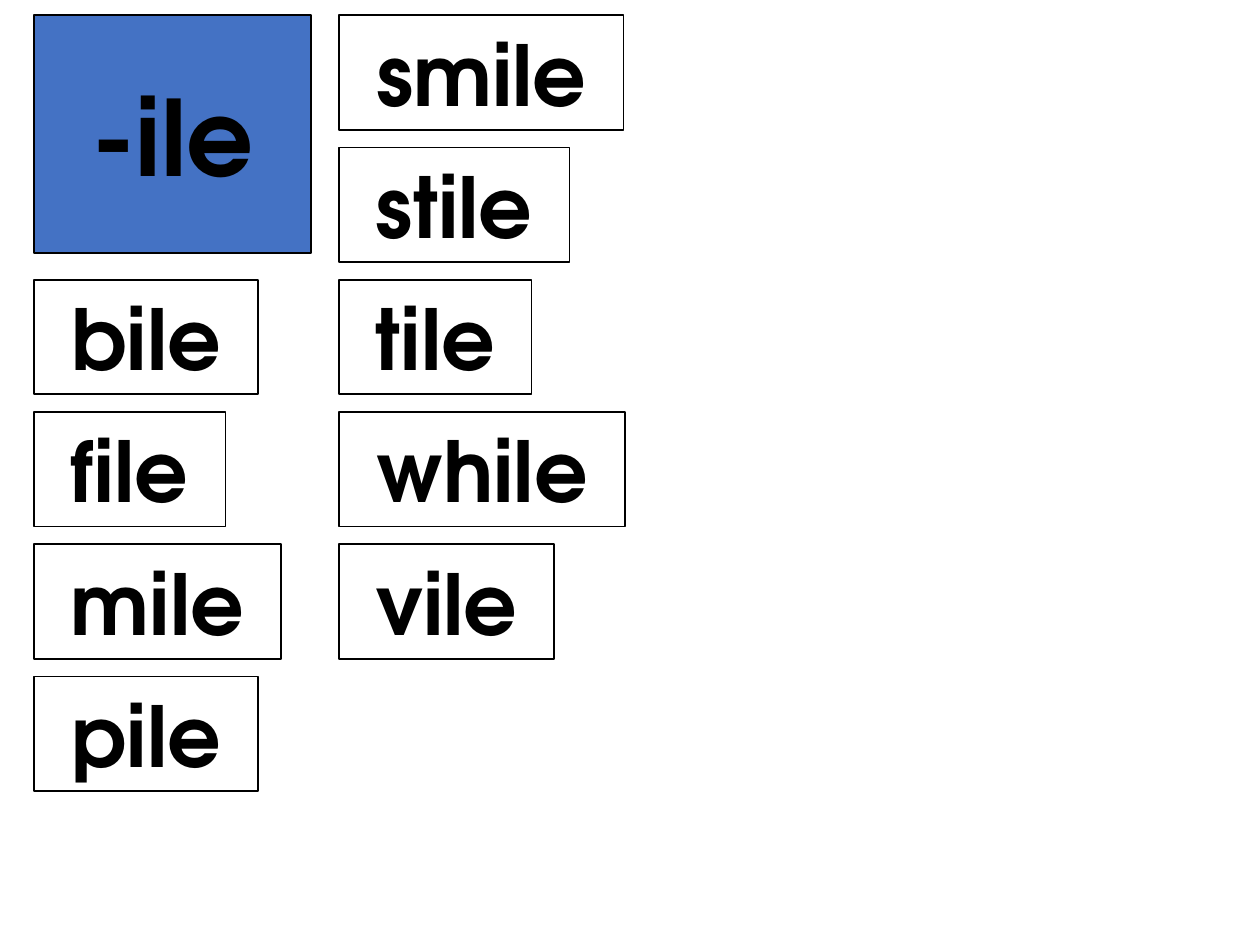
from pptx import Presentation
from pptx.dml.color import RGBColor
from pptx.enum.shapes import MSO_SHAPE
from pptx.enum.text import MSO_ANCHOR, MSO_AUTO_SIZE, PP_ALIGN
from pptx.util import Inches, Pt

RECTANGLE = MSO_SHAPE.RECTANGLE
MIDDLE = MSO_ANCHOR.MIDDLE
NO_AUTOFIT = MSO_AUTO_SIZE.NONE
CENTER = PP_ALIGN.CENTER
TITLE_ONLY = 5

TOP = 0.12
ROW_STEP = 1.05
CARD_HEIGHT = 0.91

# Each column: left edge, first row, (word, card width) from top to bottom
WORD_COLUMNS = [
    (0.27, 2, [("bile", 1.78), ("file", 1.52), ("mile", 1.96), ("pile", 1.78)]),
    (2.69, 0, [("smile", 2.26), ("stile", 1.83), ("tile", 1.53),
               ("while", 2.27), ("vile", 1.71)]),
]


def color(hex_string):
    return RGBColor.from_string(hex_string)


class WordFamilySlide:
    font_name = "TeX Gyre Adventor"
    ink = "000000"
    card_fill = "FFFFFF"
    heading_fill = "4472C4"

    def __init__(self, presentation):
        layout = presentation.slide_layouts[TITLE_ONLY]
        self.slide = presentation.slides.add_slide(layout)

    def format_box(self, box, text, size, fill, wrap):
        """Give a box its fill, outline and centred bold text."""
        box.fill.solid()
        box.fill.fore_color.rgb = color(fill)
        box.line.color.rgb = color(self.ink)
        box.line.width = Pt(1)
        frame = box.text_frame
        frame.text = text
        frame.word_wrap = wrap
        frame.auto_size = NO_AUTOFIT
        frame.vertical_anchor = MIDDLE
        paragraph = frame.paragraphs[0]
        paragraph.alignment = CENTER
        paragraph.line_spacing = 1.0
        paragraph.font.name = self.font_name
        paragraph.font.size = Pt(size)
        paragraph.font.bold = True
        paragraph.font.color.rgb = color(self.ink)

    def heading(self, text, left, top, width, height):
        title = self.slide.shapes.title
        title.left, title.top = Inches(left), Inches(top)
        title.width, title.height = Inches(width), Inches(height)
        self.format_box(title, text, 60, self.heading_fill, wrap=True)

    def word_card(self, word, left, top, width):
        card = self.slide.shapes.add_shape(
            RECTANGLE, Inches(left), Inches(top), Inches(width), Inches(CARD_HEIGHT))
        card.shadow.inherit = False
        self.format_box(card, word, 48, self.card_fill, wrap=False)


def main():
    presentation = Presentation()
    presentation.slide_width = Inches(10)
    presentation.slide_height = Inches(7.5)

    family = WordFamilySlide(presentation)
    family.heading("-ile", 0.27, TOP, 2.2, 1.89)
    for left, first_row, words in WORD_COLUMNS:
        for row, (word, width) in enumerate(words, first_row):
            family.word_card(word, left, TOP + row * ROW_STEP, width)

    presentation.save("out.pptx")


if __name__ == "__main__":
    main()
